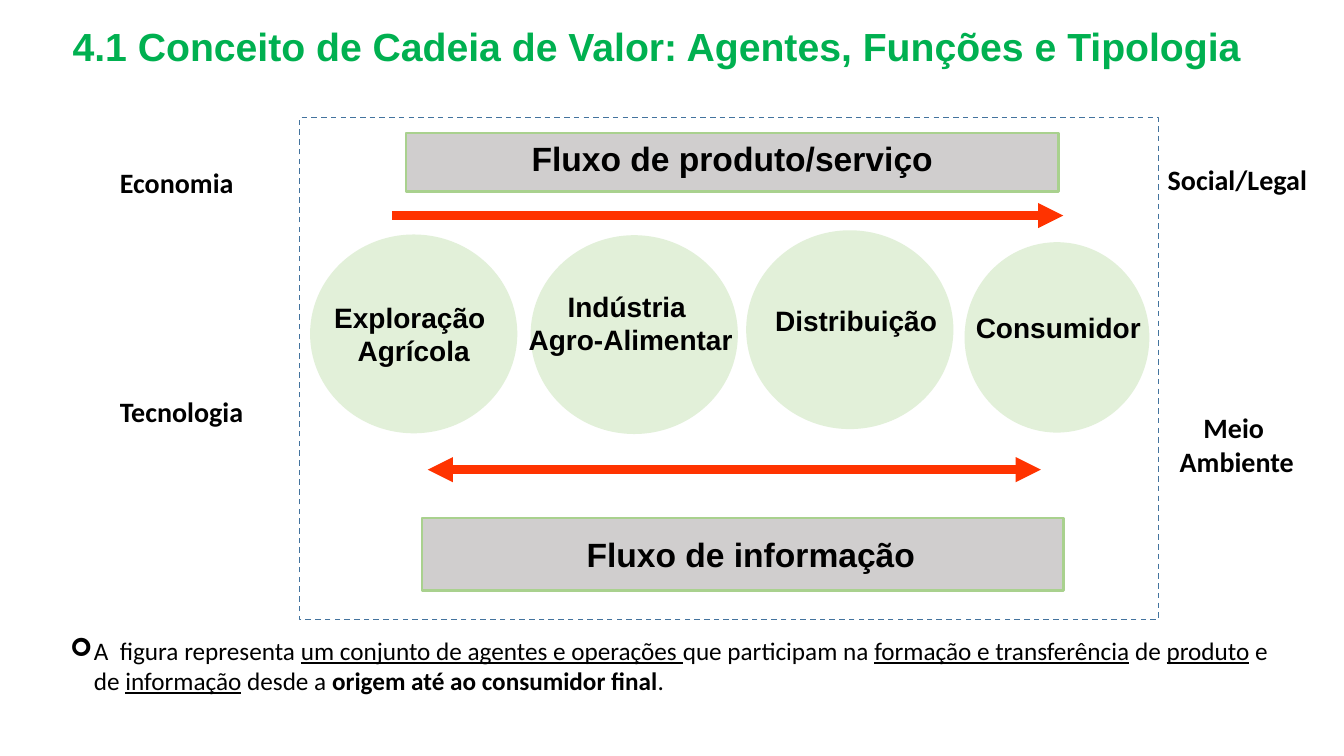
from lxml.etree import SubElement
from pptx import Presentation
from pptx.dml.color import RGBColor
from pptx.enum.dml import MSO_LINE
from pptx.enum.shapes import MSO_CONNECTOR, MSO_SHAPE
from pptx.enum.text import MSO_ANCHOR, PP_ALIGN
from pptx.oxml.ns import qn
from pptx.util import Pt

COLORS = {
    "title": "00B050", "text": "000000", "frame": "FFFFFF", "frame_edge": "43739E",
    "agent": "E2F0D9", "flow": "D0CECE", "flow_edge": "A9D18E", "arrow": "FF3300",
}
LEFT, CENTER = PP_ALIGN.LEFT, PP_ALIGN.CENTER
HEADING = {"name": "Arial", "size": Pt(28), "bold": True}
FLOW = {"name": "Arial", "size": Pt(24), "bold": True}
AGENT = {"name": "Arial", "size": Pt(20), "bold": True}
CONTEXT = {"name": "Calibri", "size": Pt(20), "bold": True}
BODY = {"name": "Calibri", "size": Pt(18)}
UNDERLINED, STRONG = {"underline": True}, {"bold": True}

AGENTS = [
    ((222.5, 168.5, 146, 140), (238, 214.5, 115, 48), ["Exploração ", "Agrícola"]),
    ((380, 169, 146, 140), (377, 206.5, 147, 48), ["Indústria ", "Agro-Alimentar"]),
    ((534, 165.5, 146, 140), (553, 217, 117, 24), ["Distribuição"]),
    ((690, 174, 130, 134), (696, 222, 120, 24), ["Consumidor"]),
]
CONTEXTS = [
    ((78.5, 114.5, 96, 32), ["Economia"], LEFT),
    ((78.5, 278, 104, 32), ["Tecnologia"], LEFT),
    ((827, 112.5, 115, 32), ["Social/Legal"], LEFT),
    ((835, 290, 97, 55), ["Meio ", "Ambiente"], CENTER),
]
EXPLANATION = [
    ("A  figura representa ", {}),
    ("um conjunto de agentes e operações ", UNDERLINED),
    ("que participam na ", {}),
    ("formação e transferência", UNDERLINED),
    (" de ", {}),
    ("produto", UNDERLINED),
    (" e de ", {}),
    ("informação", UNDERLINED),
    (" desde a ", {}),
    ("origem até ao consumidor final", STRONG),
    (".", {}),
]


def rgb(key):
    """Return the named colour."""
    return RGBColor.from_string(COLORS[key])


def add_run(paragraph, wording, style, color="text"):
    """Append a run with the given font values."""
    run = paragraph.add_run()
    run.text = wording
    for attribute, setting in style.items():
        setattr(run.font, attribute, setting)
    run.font.color.rgb = rgb(color)


def set_frame(frame, wrap=True, inset=None):
    """Anchor text at the top and set its wrapping and margins."""
    frame.word_wrap = wrap
    frame.vertical_anchor = MSO_ANCHOR.TOP
    if inset is not None:
        for side in ("left", "top", "right", "bottom"):
            setattr(frame, f"margin_{side}", Pt(inset))


def write_lines(frame, lines, style, align=CENTER, color="text"):
    """Write one paragraph for each line."""
    for index, line in enumerate(lines):
        paragraph = frame.add_paragraph() if index else frame.paragraphs[0]
        paragraph.alignment = align
        add_run(paragraph, line, style, color)


def add_label(slide, box, lines, style, align=CENTER, inset=None):
    """Add a text box that keeps its line breaks."""
    frame = slide.shapes.add_textbox(*map(Pt, box)).text_frame
    set_frame(frame, wrap=False, inset=inset)
    write_lines(frame, lines, style, align)


def add_panel(slide, preset, box, fill, edge, width=2):
    """Add a filled and outlined shape without shadow."""
    panel = slide.shapes.add_shape(preset, *map(Pt, box))
    panel.shadow.inherit = False
    panel.fill.solid()
    panel.fill.fore_color.rgb = rgb(fill)
    panel.line.color.rgb = rgb(edge)
    panel.line.width = Pt(width)
    return panel


def add_arrow(slide, start, end, y, ends):
    """Add a thick horizontal arrow with heads at the given ends."""
    arrow = slide.shapes.add_connector(MSO_CONNECTOR.STRAIGHT, Pt(start), Pt(y), Pt(end), Pt(y))
    arrow.line.color.rgb = rgb("arrow")
    arrow.line.width = Pt(6)
    properties = arrow.line._get_or_add_ln()
    for end_name in ends:
        SubElement(properties, qn(f"a:{end_name}"), type="triangle")
    SubElement(arrow._element.spPr, qn("a:effectLst"))


def add_title(slide, wording):
    """Place and format the title placeholder."""
    title = slide.shapes.title
    title.left, title.top, title.width, title.height = map(Pt, (21, 12, 896, 41))
    set_frame(title.text_frame)
    write_lines(title.text_frame, [wording], HEADING, color="title")


def add_explanation(slide):
    """Add the bulleted paragraph below the diagram."""
    frame = slide.shapes.add_textbox(*map(Pt, (43, 450, 892, 51))).text_frame
    set_frame(frame)
    paragraph = frame.paragraphs[0]
    properties = paragraph._p.get_or_add_pPr()
    for attribute, indent in {"marL": 17, "indent": -17}.items():
        properties.set(attribute, str(Pt(indent)))
    SubElement(properties, qn("a:buFont"), typeface="Wingdings")
    SubElement(properties, qn("a:buChar"), char="➢")
    for wording, emphasis in EXPLANATION:
        add_run(paragraph, wording, BODY | emphasis)


def main():
    """Build the value chain slide."""
    presentation = Presentation()
    presentation.slide_width, presentation.slide_height = Pt(960), Pt(540)
    slide = presentation.slides.add_slide(presentation.slide_layouts[5])
    add_title(slide, "4.1 Conceito de Cadeia de Valor: Agentes, Funções e Tipologia")

    chain = add_panel(slide, MSO_SHAPE.RECTANGLE, (214, 84, 613.5, 358.5), "frame", "frame_edge", 1)
    chain.line.dash_style = MSO_LINE.DASH

    product = add_panel(slide, MSO_SHAPE.RECTANGLE, (290, 95, 466, 42), "flow", "flow_edge")
    set_frame(product.text_frame)
    write_lines(product.text_frame, ["Fluxo de produto/serviço"], FLOW)
    add_panel(slide, MSO_SHAPE.RECTANGLE, (301.5, 370, 458, 52), "flow", "flow_edge")
    add_label(slide, (419, 381.5, 237, 29), ["Fluxo de informação"], FLOW, LEFT, inset=0)

    for circle, label, lines in AGENTS:
        add_panel(slide, MSO_SHAPE.OVAL, circle, "agent", "agent")
        add_label(slide, label, lines, AGENT, inset=0)
    add_arrow(slide, 280, 759.5, 154, ["tailEnd"])
    add_arrow(slide, 305.5, 743.5, 335.5, ["headEnd", "tailEnd"])

    for box, lines, align in CONTEXTS:
        add_label(slide, box, lines, CONTEXT, align)
    add_explanation(slide)
    presentation.save("out.pptx")


if __name__ == "__main__":
    main()
